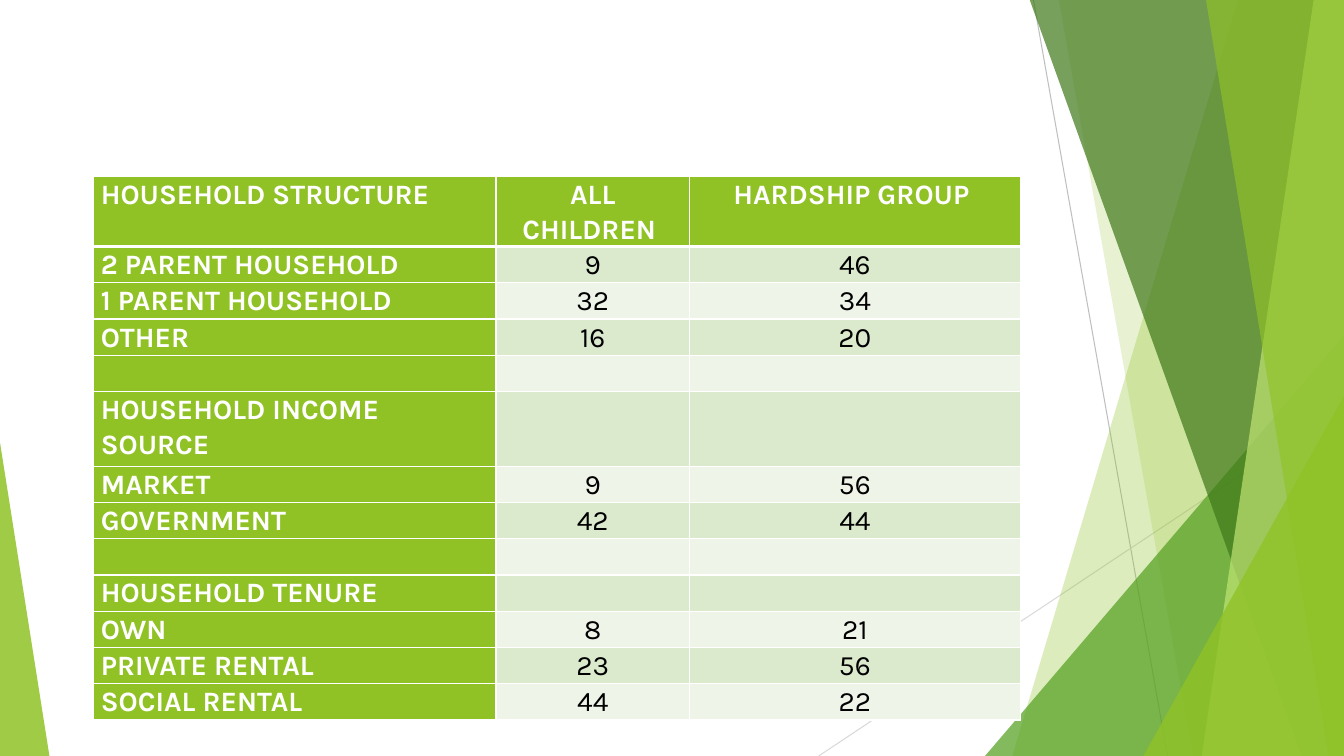
from dataclasses import dataclass
from typing import Union

from lxml import etree
from pptx import Presentation
from pptx import util as u
from pptx.dml.color import RGBColor
from pptx.enum import shapes, text
from pptx.oxml import ns

PX = 9144  # EMU in one px: 100 px to the inch


@dataclass(frozen=True)
class Theme:
    lime: str = "90C226"
    pale_lime: str = "C0E474"
    green: str = "54A021"
    forest: str = "3F7819"
    band_dark: str = "DBE9CD"
    band_light: str = "EEF4E8"
    white: str = "FFFFFF"
    black: str = "000000"
    grey: str = "BFBFBF"
    light_grey: str = "D9D9D9"
    font: str = "Karla"
    cell_size: float = 20
    thin: float = 0.75
    rule: float = 1
    header_rule: float = 3


THEME = Theme()


@dataclass(frozen=True)
class Ray:
    start: tuple[int, int]
    end: tuple[int, int]
    color: str


@dataclass(frozen=True)
class Shard:
    """A sheet reaching the right edge, slanting from top to bottom."""
    top: int
    bottom: int
    color: str
    opacity: int


@dataclass(frozen=True)
class Wedge:
    left: int
    top: int
    width: int
    apex: float
    color: str
    opacity: int


@dataclass(frozen=True)
class Row:
    label: str = ""
    children: str = ""
    hardship: str = ""
    height: int = 36


WIDTH, HEIGHT = 1333, 750

# Facets of the backdrop, from back to front
FACETS: list[Union[Ray, Shard, Wedge]] = [
    Ray((1025, 0), (1158, HEIGHT), THEME.grey),
    Ray((WIDTH, 403), (812, HEIGHT), THEME.light_grey),
    Shard(1228, 1004, THEME.lime, 30),
    Shard(1050, 1183, THEME.lime, 20),
    Wedge(977, 333, 356, 1, THEME.green, 72),
    Shard(1021, 1291, THEME.forest, 70),
    Shard(1303, 1192, THEME.pale_lime, 70),
    Shard(1196, 1318, THEME.lime, 65),
    Wedge(1134, 393, 199, 1, THEME.lime, 80),
    Wedge(0, 439, 49, 0, THEME.lime, 85),
]

TABLE_LEFT, TABLE_TOP = 93, 175
COLUMNS = (399, 192, 328)
ROWS = [
    Row("HOUSEHOLD STRUCTURE", "ALL CHILDREN ", "HARDSHIP GROUP ", 59),
    Row("2 PARENT HOUSEHOLD", "9", "46"),
    Row("1 PARENT HOUSEHOLD", "32", "34"),
    Row("OTHER", "16", "20"),
    Row(),
    Row("HOUSEHOLD INCOME SOURCE", height=74),
    Row("MARKET", "9", "56"),
    Row("GOVERNMENT", "42", "44"),
    Row(),
    Row("HOUSEHOLD TENURE"),
    Row("OWN", "8", "21"),
    Row("PRIVATE RENTAL", "23", "56"),
    Row("SOCIAL RENTAL", "44", "22"),
]


def apply(target, values: dict) -> None:
    for name, value in values.items():
        setattr(target, name, value)


def paint(shape, color: str, opacity: int) -> None:
    shape.shadow.inherit = False
    shape.line.fill.background()
    shape.fill.solid()
    shape.fill.fore_color.rgb = RGBColor.from_string(color)
    tint = shape.fill._xPr.find(".//" + ns.qn("a:srgbClr"))
    etree.SubElement(tint, ns.qn("a:alpha"), val=str(opacity * 1000))


def draw_ray(page, ray: Ray) -> None:
    ends = [value * PX for value in ray.start + ray.end]
    line = page.shapes.add_connector(shapes.MSO_CONNECTOR.STRAIGHT, *ends)
    line.line.width = u.Pt(THEME.thin)
    line.line.color.rgb = RGBColor.from_string(ray.color)
    etree.SubElement(line._element.spPr, ns.qn("a:effectLst"))


def draw_shard(page, shard: Shard) -> None:
    builder = page.shapes.build_freeform(shard.top, -1, scale=PX)
    builder.add_line_segments(
        [(WIDTH, -1), (WIDTH, HEIGHT), (shard.bottom, HEIGHT)], close=True)
    paint(builder.convert_to_shape(), shard.color, shard.opacity)


def draw_wedge(page, wedge: Wedge) -> None:
    box = (wedge.left, wedge.top, wedge.width, HEIGHT - wedge.top)
    shape = page.shapes.add_shape(
        shapes.MSO_SHAPE.ISOSCELES_TRIANGLE, *(value * PX for value in box))
    shape.adjustments[0] = wedge.apex
    paint(shape, wedge.color, wedge.opacity)


def add_borders(cell, row: int) -> None:
    widths = {"L": THEME.rule, "R": THEME.rule,
              "T": THEME.header_rule if row == 1 else THEME.rule,
              "B": THEME.header_rule if row == 0 else THEME.rule}
    properties = cell._tc.get_or_add_tcPr()
    for place, (side, width) in enumerate(widths.items()):
        border = etree.Element(ns.qn(f"a:ln{side}"), w=str(u.Pt(width)))
        fill = etree.SubElement(border, ns.qn("a:solidFill"))
        etree.SubElement(fill, ns.qn("a:srgbClr"), val=THEME.white)
        properties.insert(place, border)


def fill_cell(cell, words: str, row: int, column: int) -> None:
    heading = row == 0 or column == 0
    band = THEME.band_dark if row % 2 else THEME.band_light
    apply(cell, {"margin_left": 7 * PX, "margin_right": 7 * PX,
                 "margin_top": 0, "margin_bottom": 0})
    cell.fill.solid()
    cell.fill.fore_color.rgb = RGBColor.from_string(THEME.lime if heading else band)
    add_borders(cell, row)
    if not words:
        return
    para = cell.text_frame.paragraphs[0]
    align = text.PP_ALIGN.CENTER if column else text.PP_ALIGN.LEFT
    apply(para, {"alignment": align, "line_spacing": 1.07, "space_after": u.Pt(8)})
    span = para.add_run()
    span.text = words
    apply(span.font, {"name": THEME.font, "size": u.Pt(THEME.cell_size), "bold": heading})
    span.font.color.rgb = RGBColor.from_string(THEME.white if heading else THEME.black)


def draw_table(page) -> None:
    box = (TABLE_LEFT, TABLE_TOP, sum(COLUMNS), sum(row.height for row in ROWS))
    table = page.shapes.add_table(
        len(ROWS), len(COLUMNS), *(value * PX for value in box)).table
    for column, width in zip(table.columns, COLUMNS):
        column.width = width * PX
    for index, row in enumerate(ROWS):
        table.rows[index].height = row.height * PX
        for column, words in enumerate((row.label, row.children, row.hardship)):
            fill_cell(table.cell(index, column), words, index, column)


def main() -> None:
    deck = Presentation()
    apply(deck, {"slide_width": WIDTH * PX, "slide_height": HEIGHT * PX})
    page = deck.slides.add_slide(deck.slide_layouts[6])

    # Backdrop
    draw = {Ray: draw_ray, Shard: draw_shard, Wedge: draw_wedge}
    for facet in FACETS:
        draw[type(facet)](page, facet)

    # Household figures
    draw_table(page)
    deck.save("out.pptx")


if __name__ == "__main__":
    main()
